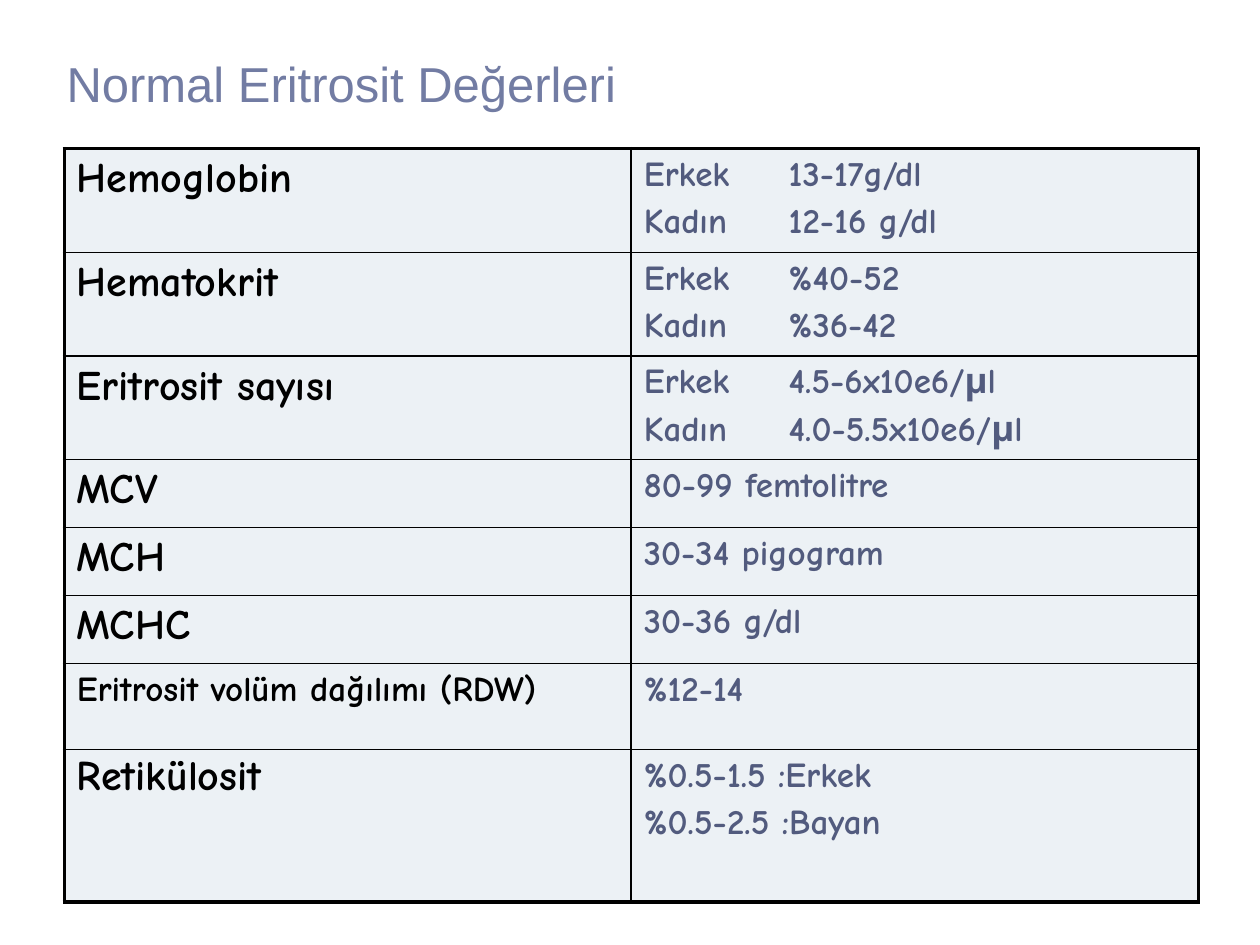
from lxml import etree
from pptx import Presentation
from pptx import util as u
from pptx.dml.color import RGBColor
from pptx.enum import text
from pptx.oxml.ns import qn

THEME = {
    "title": {"name": "Arial", "size": u.Pt(28), "bold": False, "color": "727CA3"},
    "name": {"name": "Comic Neue", "size": u.Pt(24), "bold": True, "color": "000000"},
    "long_name": {"name": "Comic Neue", "size": u.Pt(20), "bold": True, "color": "000000"},
    "value": {"name": "Comic Neue", "size": u.Pt(20), "bold": True, "color": "525B7E"},
    "cell": "ECF1F5",
    "border": "000000",
    "outer": u.Pt(2.25),
    "inner": u.Pt(1),
}


def write(p, words, style):
    r = p.add_run()
    r.text = words
    for key, value in THEME[style].items():
        if key == "color":
            r.font.color.rgb = RGBColor.from_string(value)
        else:
            setattr(r.font, key, value)


def add_borders(cell, widths):
    tc_pr = cell._tc.get_or_add_tcPr()
    for i, (side, width) in enumerate(widths.items()):
        ln = etree.Element(qn(f"a:ln{side}"), w=str(int(width)))
        fill = etree.SubElement(ln, qn("a:solidFill"))
        etree.SubElement(fill, qn("a:srgbClr"), val=THEME["border"])
        tc_pr.insert(i, ln)


prs = Presentation()
prs.slide_width, prs.slide_height = u.Inches(10), u.Inches(7.5)
s = prs.slides.add_slide(prs.slide_layouts[6])

sp = s.shapes.add_textbox(u.Inches(0.43), u.Inches(0.3), u.Inches(9.02), u.Inches(0.64))
tf = sp.text_frame
tf.word_wrap = True
tf.vertical_anchor = text.MSO_ANCHOR.BOTTOM
write(tf.paragraphs[0], "Normal Eritrosit Değerleri", "title")

rows = [
    (0.82, "name", "Hemoglobin", ["Erkek\t13-17g/dl", "Kadın\t12-16 g/dl"]),
    (0.82, "name", "Hematokrit", ["Erkek\t%40-52", "Kadın\t%36-42"]),
    (0.82, "name", "Eritrosit sayısı", ["Erkek\t4.5-6x10e6/μl", "Kadın\t4.0-5.5x10e6/μl"]),
    (0.54, "name", "MCV", ["80-99 femtolitre"]),
    (0.54, "name", "MCH", ["30-34 pigogram"]),
    (0.54, "name", "MCHC", ["30-36 g/dl"]),
    (0.68, "long_name", "Eritrosit volüm dağılımı (RDW)", ["%12-14"]),
    (1.21, "name", "Retikülosit", ["%0.5-1.5 :Erkek", "%0.5-2.5 :Bayan"]),
]
table = s.shapes.add_table(
    len(rows), 2, u.Inches(0.51), u.Inches(1.18), u.Inches(9), u.Inches(6.02)
).table
table.first_row = table.horz_banding = False

for i, (height, name_style, name, values) in enumerate(rows):
    table.rows[i].height = u.Inches(height)
    for j, (style, lines) in enumerate([(name_style, [name]), ("value", values)]):
        cell = table.cell(i, j)
        cell.fill.solid()
        cell.fill.fore_color.rgb = RGBColor.from_string(THEME["cell"])
        on_edge = {"L": j == 0, "R": j == 1, "T": i == 0, "B": i == len(rows) - 1}
        add_borders(cell, {side: THEME["outer" if edge else "inner"]
                           for side, edge in on_edge.items()})
        tf = cell.text_frame
        for n, line in enumerate(lines):
            p = tf.add_paragraph() if n else tf.paragraphs[0]
            p.space_before = u.Pt(THEME[style]["size"].pt * 0.2)
            if name == "Retikülosit" and j == 0:
                p.line_spacing = 0.9
            if "\t" in line:
                tabs = etree.SubElement(p._p.get_or_add_pPr(), qn("a:tabLst"))
                etree.SubElement(tabs, qn("a:tab"), pos=str(int(u.Inches(1.15))), algn="l")
            write(p, line, style)

prs.save("out.pptx")
